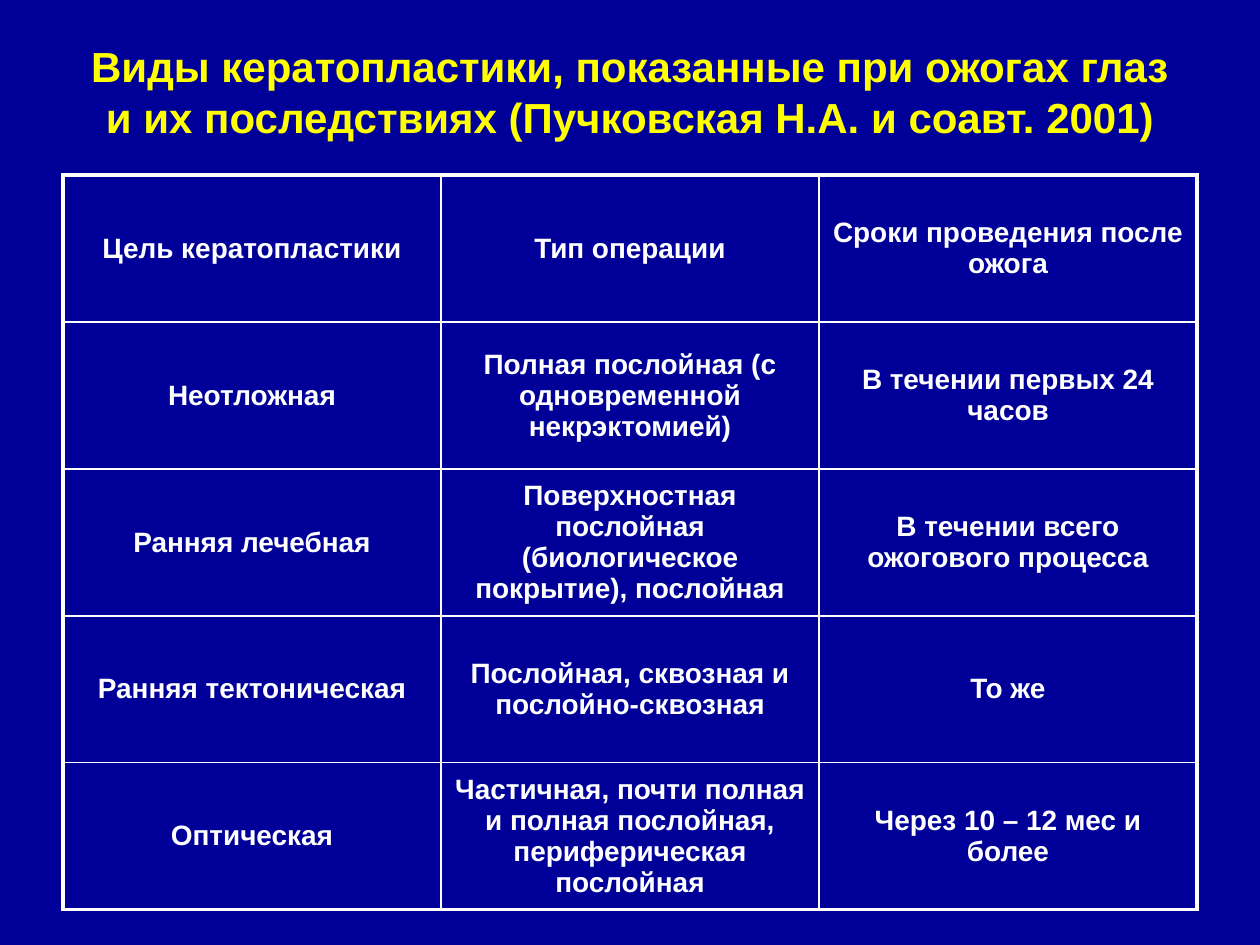
import lxml.etree
import pptx
import pptx.dml.color
import pptx.enum.text
import pptx.oxml
import pptx.oxml.ns
import pptx.util

Inches = pptx.util.Inches
Pt = pptx.util.Pt
qn = pptx.oxml.ns.qn

COLORS = {"background": "000099", "title": "FFFF00", "text": "FFFFFF",
          "border": "FFFFFF", "shadow": "000000"}
THIN, THICK = 1, 2.25
TITLE = "Виды кератопластики, показанные при ожогах глаз и их последствиях (Пучковская Н.А. и соавт. 2001)"
ROWS = [
    ["Цель кератопластики", "Тип операции", "Сроки проведения после ожога"],
    ["Неотложная", "Полная послойная (с одновременной некрэктомией)",
     "В течении первых 24 часов"],
    ["Ранняя лечебная", "Поверхностная послойная (биологическое покрытие), послойная",
     "В течении всего ожогового процесса"],
    ["Ранняя тектоническая", "Послойная, сквозная и послойно-сквозная", "То же"],
    ["Оптическая", "Частичная, почти полная и полная послойная, периферическая послойная",
     "Через 10 – 12 мес и более"],
]


def rgb(name):
    return pptx.dml.color.RGBColor.from_string(COLORS[name])


class SlideBuilder:
    font = {"name": "Arial", "bold": True}

    def __init__(self, deck):
        self.page = deck.slides.add_slide(deck.slide_layouts[5])
        fill = self.page.background.fill
        fill.solid()
        fill.fore_color.rgb = rgb("background")

    def centred_text(self, frame, text, size, color):
        para = frame.paragraphs[0]
        para.alignment = pptx.enum.text.PP_ALIGN.CENTER
        span = para.add_run()
        span.text = text
        for key, value in {**self.font, "size": Pt(size)}.items():
            setattr(span.font, key, value)
        span.font.color.rgb = rgb(color)
        return span

    def title(self, text, left, top, width, height):
        box = self.page.shapes.title
        place = {"left": left, "top": top, "width": width, "height": height}
        for key, value in place.items():
            setattr(box, key, Inches(value))
        frame = box.text_frame
        frame.word_wrap = True
        frame.auto_size = pptx.enum.text.MSO_AUTO_SIZE.NONE
        frame.vertical_anchor = pptx.enum.text.MSO_ANCHOR.MIDDLE
        span = self.centred_text(frame, text, 24, "title")
        self.text_shadow(span)

    def text_shadow(self, span):
        effects = pptx.oxml.parse_xml(
            f'<a:effectLst {pptx.oxml.ns.nsdecls("a")}>'
            '<a:outerShdw dist="35921" dir="2700000" algn="ctr">'
            f'<a:srgbClr val="{COLORS["shadow"]}"/></a:outerShdw></a:effectLst>')
        properties = span._r.get_or_add_rPr()
        properties.find(qn("a:solidFill")).addnext(effects)

    def table(self, rows, left, top, width, height):
        last_row, last_column = len(rows) - 1, len(rows[0]) - 1
        grid = self.page.shapes.add_table(
            len(rows), len(rows[0]), Inches(left), Inches(top),
            Inches(width), Inches(height)).table
        grid.first_row = grid.horz_banding = False
        for i, row in enumerate(rows):
            for j, text in enumerate(row):
                cell = grid.cell(i, j)
                cell.vertical_anchor = pptx.enum.text.MSO_ANCHOR.MIDDLE
                self.centred_text(cell.text_frame, text, 16, "text")
                outer = {"L": j == 0, "R": j == last_column,
                         "T": i == 0, "B": i == last_row}
                self.borders(cell, outer)
                cell.fill.background()

    def borders(self, cell, outer):
        properties = cell._tc.get_or_add_tcPr()
        for side, is_outer in outer.items():
            width = Pt(THICK if is_outer else THIN)
            line = lxml.etree.SubElement(properties, qn(f"a:ln{side}"), w=str(int(width)))
            fill = lxml.etree.SubElement(line, qn("a:solidFill"))
            lxml.etree.SubElement(fill, qn("a:srgbClr"), val=COLORS["border"])


def main():
    deck = pptx.Presentation()
    deck.slide_width, deck.slide_height = Inches(10), Inches(7.5)
    builder = SlideBuilder(deck)
    builder.title(TITLE, 0.5, 0.3, 9, 0.85)
    builder.table(ROWS, 0.5, 1.39, 9, 5.83)
    deck.save("out.pptx")


if __name__ == "__main__":
    main()
